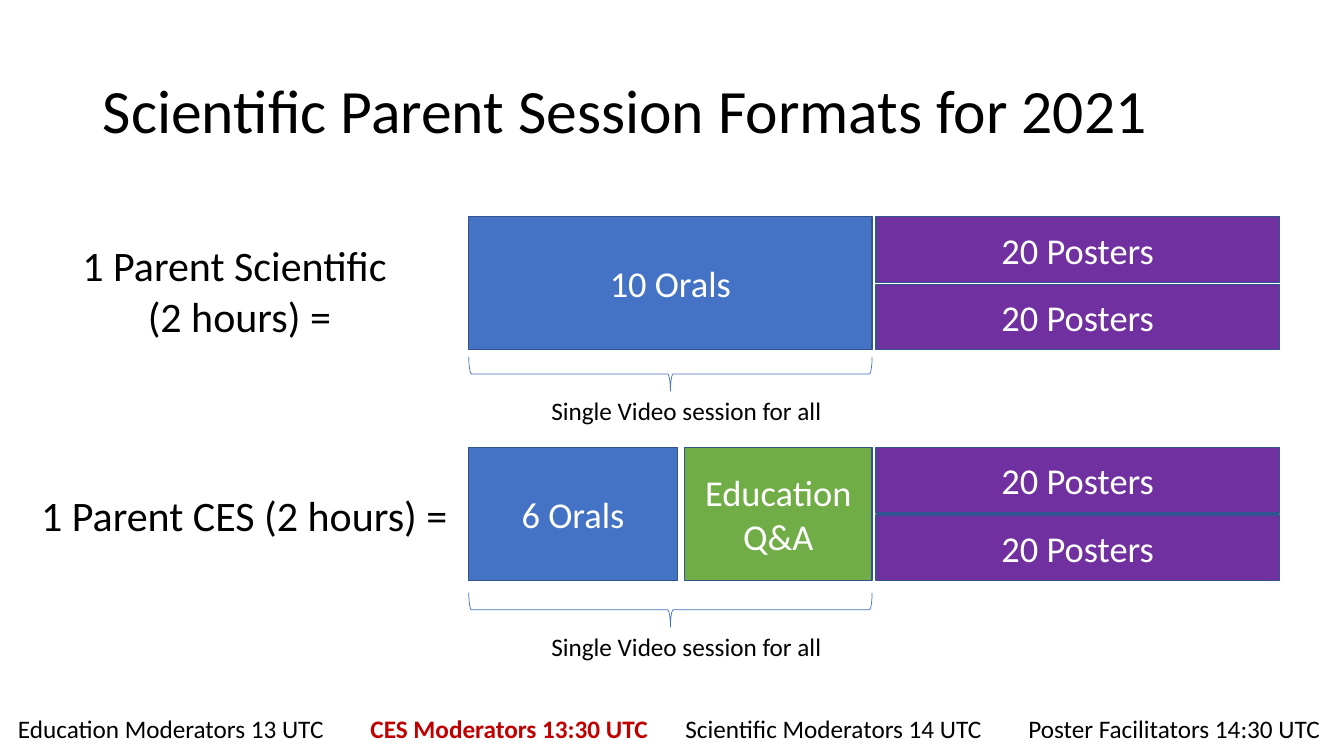
from pptx import Presentation
from pptx.dml.color import RGBColor
from pptx.enum.shapes import MSO_SHAPE as Shape
from pptx.enum.text import MSO_ANCHOR as Anchor, MSO_AUTO_SIZE as AutoSize, PP_ALIGN as Align
from pptx.util import Emu, Pt

EMU_PER_PX = 9144
BLACK, WHITE, RED = "000000", "FFFFFF", "C00000"
BLUE, GREEN, PURPLE, OUTLINE = "4472C4", "70AD47", "7030A0", "325491"

BLOCK_LEFT, BLOCK_WIDTH, BLOCK_HEIGHT = 465, 400, 132
POSTER_LEFT, POSTER_HEIGHT, POSTER_STEP = 869, 65, 67
BRACE_DEPTH, BRACE_TO_LABEL = 34, 33


def px(length):
    return Emu(length * EMU_PER_PX)


def color(value):
    return RGBColor.from_string(value)


class SessionSlide:
    """Draws session blocks, labels and braces in one style on one slide."""

    font = "Calibri"

    def __init__(self, presentation):
        self.slide = presentation.slides.add_slide(presentation.slide_layouts[5])

    def set_text(self, shape, text, size, ink, align, bold=False):
        shape.text_frame.text = text
        for paragraph in shape.text_frame.paragraphs:
            paragraph.alignment = align
            for run in paragraph.runs:
                run.font.name = self.font
                run.font.size = Pt(size)
                run.font.bold = bold
                run.font.color.rgb = color(ink)

    def title(self, text, left, top, width, height):
        shape = self.slide.shapes.title
        shape.left, shape.top, shape.width, shape.height = map(px, (left, top, width, height))
        self.set_text(shape, text, 44, BLACK, Align.LEFT)
        shape.text_frame.vertical_anchor = Anchor.MIDDLE
        shape.text_frame.paragraphs[0].line_spacing = 0.9

    def label(self, text, left, top, width, height, size=18, ink=BLACK, align=Align.LEFT, bold=False):
        shape = self.slide.shapes.add_textbox(*map(px, (left, top, width, height)))
        self.set_text(shape, text, size, ink, align, bold)
        shape.text_frame.word_wrap = False
        shape.text_frame.auto_size = AutoSize.SHAPE_TO_FIT_TEXT

    def block(self, text, fill, left, top, width, height):
        shape = self.slide.shapes.add_shape(Shape.RECTANGLE, *map(px, (left, top, width, height)))
        shape.shadow.inherit = False
        shape.fill.solid()
        shape.fill.fore_color.rgb = color(fill)
        shape.line.color.rgb = color(OUTLINE)
        shape.line.width = Pt(1)
        self.set_text(shape, text, 26, WHITE, Align.CENTER)
        shape.text_frame.vertical_anchor = Anchor.MIDDLE

    def brace(self, left, top, span, depth):
        turned_left = left + (span - depth) // 2
        turned_top = top - (span - depth) // 2
        shape = self.slide.shapes.add_shape(
            Shape.LEFT_BRACE, *map(px, (turned_left, turned_top, depth, span)))
        shape.rotation = 270
        shape.shadow.inherit = False
        shape.fill.background()
        shape.line.color.rgb = color(BLUE)
        shape.line.width = Pt(0.5)

    def session(self, top, brace_top, talks):
        for text, fill, left, width in talks:
            self.block(text, fill, left, top, width, BLOCK_HEIGHT)
        for row in range(2):
            self.block("20 Posters", PURPLE, POSTER_LEFT, top + row * POSTER_STEP,
                       BLOCK_WIDTH, POSTER_HEIGHT)
        self.brace(BLOCK_LEFT, brace_top, BLOCK_WIDTH, BRACE_DEPTH)
        self.label("Single Video session for all", 537, brace_top + BRACE_TO_LABEL, 290, 40)


def main():
    presentation = Presentation()
    presentation.slide_width, presentation.slide_height = px(1333), px(750)
    page = SessionSlide(presentation)
    page.title("Scientific Parent Session Formats for 2021", 92, 40, 1150, 145)

    page.label("1 Parent Scientific \n(2 hours) =", 70, 233, 335, 111, size=30, align=Align.CENTER)
    page.session(215, 354, [("10 Orals", BLUE, BLOCK_LEFT, BLOCK_WIDTH)])

    page.label("1 Parent CES (2 hours) =", 31, 481, 427, 61, size=30)
    page.session(444, 588, [("6 Orals", BLUE, BLOCK_LEFT, 207),
                            ("Education\nQ&A", GREEN, 679, 186)])

    for text, left, width, ink, bold in [
        ("Education Moderators 13 UTC", 8, 331, BLACK, False),
        (" CES Moderators 13:30 UTC", 352, 303, RED, True),
        ("Scientific Moderators 14 UTC", 670, 323, BLACK, False),
        ("Poster Facilitators 14:30 UTC", 1010, 312, BLACK, False),
    ]:
        page.label(text, left, 703, width, 40, ink=ink, bold=bold)

    presentation.save("out.pptx")


if __name__ == "__main__":
    main()
